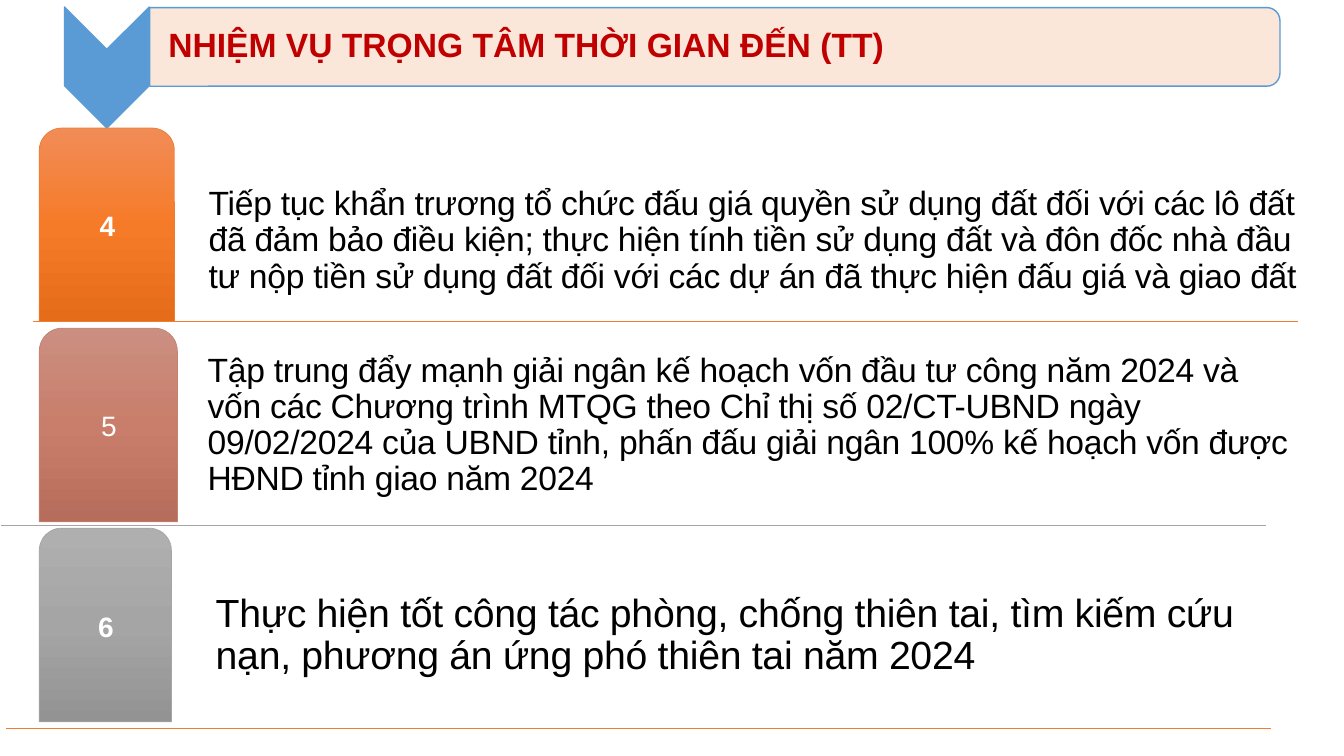
from copy import deepcopy

from lxml.etree import SubElement
from pptx import Presentation
from pptx.dml.color import RGBColor
from pptx.enum.shapes import MSO_CONNECTOR, MSO_SHAPE
from pptx.enum.text import MSO_ANCHOR, PP_ALIGN
from pptx.oxml.ns import qn
from pptx.util import Inches, Pt

BLUE = RGBColor(0x5B, 0x9B, 0xD5)
PEACH = RGBColor(0xFB, 0xE5, 0xD6)
RED = RGBColor(0xC0, 0x00, 0x00)
BLACK = RGBColor(0x00, 0x00, 0x00)
WHITE = RGBColor(0xFF, 0xFF, 0xFF)
ORANGE = RGBColor(0xED, 0x7D, 0x31)
CLAY = RGBColor(0xC4, 0x81, 0x70)
GRAY = RGBColor(0xA5, 0xA5, 0xA5)
ORANGE_STOPS = (RGBColor(0xF1, 0x8C, 0x57), RGBColor(0xF6, 0x7B, 0x28), RGBColor(0xE5, 0x6C, 0x19))
CLAY_STOPS = (RGBColor(0xCB, 0x8F, 0x81), RGBColor(0xC9, 0x7E, 0x6B), RGBColor(0xB7, 0x6D, 0x5B))
GRAY_STOPS = (RGBColor(0xAF, 0xAF, 0xAF), GRAY, RGBColor(0x93, 0x93, 0x93))

TAB_LEFT, TAB_TOP, TAB_HEIGHT, TAB_STEP = 0.39, 1.27, 1.92, 1.985
TASKS = [
    {
        "number": "4", "bold": True, "tab_width": 1.34, "stops": ORANGE_STOPS, "outline": ORANGE,
        "rule": (0.33, 3.19, 12.87, ORANGE), "box": (2.02, 1.71, 10.9, 1.27), "size": 24, "inset": 0.05,
        "text": "Tiếp tục khẩn trương tổ chức đấu giá quyền sử dụng đất đối với các lô đất đã đảm bảo "
                "điều kiện; thực hiện tính tiền sử dụng đất và đôn đốc nhà đầu tư nộp tiền sử dụng đất "
                "đối với các dự án đã thực hiện đấu giá và giao đất",
    },
    {
        "number": "5", "bold": False, "tab_width": 1.37, "stops": CLAY_STOPS, "outline": CLAY,
        "rule": (0.01, 5.21, 12.56, GRAY), "box": (2.01, 3.07, 10.82, 1.92), "size": 24, "inset": 0.05,
        "text": "Tập trung đẩy mạnh giải ngân kế hoạch vốn đầu tư công năm 2024 và vốn các Chương trình "
                "MTQG theo Chỉ thị số 02/CT-UBND ngày 09/02/2024 của UBND tỉnh, phấn đấu giải ngân 100% "
                "kế hoạch vốn được HĐND tỉnh giao năm 2024",
    },
    {
        "number": "6", "bold": True, "tab_width": 1.31, "stops": GRAY_STOPS, "outline": GRAY,
        "rule": (0.06, 7.23, 12.61, ORANGE), "box": (2.08, 4.87, 10.61, 1.92), "size": 28, "inset": 0.06,
        "text": "Thực hiện tốt công tác phòng, chống thiên tai, tìm kiếm cứu nạn, phương án ứng phó "
                "thiên tai năm 2024",
    },
]


def set_attributes(target, values):
    """Set each named attribute of the target."""
    for name, value in values.items():
        setattr(target, name, value)


def add_outlined_shape(slide, kind, box, outline, width=1, rotation=0):
    """Add a preset shape with an outline and no shadow."""
    shape = slide.shapes.add_shape(kind, *map(Inches, box))
    shape.shadow.inherit = False
    shape.rotation = rotation
    shape.line.color.rgb = outline
    shape.line.width = Pt(width)
    return shape


def fill_solid(shape, color, opacity=100):
    """Fill a shape with one colour at the given opacity in percent."""
    shape.fill.solid()
    shape.fill.fore_color.rgb = color
    if opacity < 100:
        color_element = shape.fill._xPr.find(qn("a:solidFill"))[0]
        SubElement(color_element, qn("a:alpha")).set("val", str(opacity * 1000))


def fill_gradient(shape, colors):
    """Fill a shape from top to bottom with three evenly spaced colours."""
    shape.fill.gradient()
    shape.fill.gradient_angle = 270
    stop_list = shape._element.spPr.find(qn("a:gradFill")).find(qn("a:gsLst"))
    stop_list.insert(1, deepcopy(stop_list[0]))
    for index, (stop, color) in enumerate(zip(shape.fill.gradient_stops, colors)):
        stop.color.rgb = color
        stop.position = index / 2


def add_text(slide, box, text, font, insets, anchor, alignment=PP_ALIGN.LEFT, spacing=0):
    """Add a wrapped text box with one paragraph."""
    frame = slide.shapes.add_textbox(*map(Inches, box)).text_frame
    sides = ("margin_left", "margin_top", "margin_right", "margin_bottom")
    set_attributes(frame, dict(zip(sides, map(Inches, insets))))
    set_attributes(frame, {"word_wrap": True, "vertical_anchor": anchor})
    paragraph = frame.paragraphs[0]
    set_attributes(paragraph, {"alignment": alignment, "line_spacing": 0.9})
    run = paragraph.add_run()
    run.text = text
    set_attributes(run.font, {"name": "Arial", "size": Pt(font["size"]), "bold": font["bold"]})
    run.font.color.rgb = font["color"]
    if spacing:
        run.font._element.set("spc", str(round(spacing * 100)))


def add_rule(slide, left, top, right, color):
    """Add a thin horizontal line."""
    ends = map(Inches, (left, top, right, top))
    rule = slide.shapes.add_connector(MSO_CONNECTOR.STRAIGHT, *ends)
    rule.line.color.rgb = color
    rule.line.width = Pt(0.5)
    SubElement(rule._element.spPr, qn("a:effectLst"))


def add_heading(slide):
    """Add the chevron and the title bar."""
    chevron = add_outlined_shape(slide, MSO_SHAPE.CHEVRON, (0.46, 0.25, 1.2, 0.84), BLUE, rotation=90)
    fill_solid(chevron, BLUE)
    bar = add_outlined_shape(
        slide, MSO_SHAPE.ROUND_2_SAME_RECTANGLE, (6.7, -5.14, 0.78, 11.21), BLUE, rotation=90)
    fill_solid(bar, PEACH, opacity=90)
    add_text(slide, (1.48, 0.11, 11.17, 0.7), "NHIỆM VỤ TRỌNG TÂM THỜI GIAN ĐẾN (TT)",
             {"size": 24, "bold": True, "color": RED}, (0.19, 0.02, 0.02, 0.02), MSO_ANCHOR.MIDDLE)


def add_task(slide, task, top):
    """Add a numbered tab with its description."""
    width = task["tab_width"]
    tab = add_outlined_shape(slide, MSO_SHAPE.ROUND_2_SAME_RECTANGLE,
                             (TAB_LEFT, top, width, TAB_HEIGHT), task["outline"], 0.5)
    fill_gradient(tab, task["stops"])
    add_text(slide, (TAB_LEFT + 0.07, top + 0.06, width - 0.13, TAB_HEIGHT - 0.06), task["number"],
             {"size": 20, "bold": task["bold"], "color": WHITE}, (0.04,) * 4,
             MSO_ANCHOR.MIDDLE, PP_ALIGN.CENTER)
    add_text(slide, task["box"], task["text"], {"size": task["size"], "bold": False, "color": BLACK},
             (task["inset"],) * 4, MSO_ANCHOR.BOTTOM, spacing=-0.2)


def main():
    """Build and save the slide."""
    presentation = Presentation()
    set_attributes(presentation, {"slide_width": Inches(13.33), "slide_height": Inches(7.5)})
    slide = presentation.slides.add_slide(presentation.slide_layouts[6])
    add_heading(slide)
    for task in TASKS:
        add_rule(slide, *task["rule"])
    for index, task in enumerate(TASKS):
        add_task(slide, task, TAB_TOP + index * TAB_STEP)
    presentation.save("out.pptx")


if __name__ == "__main__":
    main()
